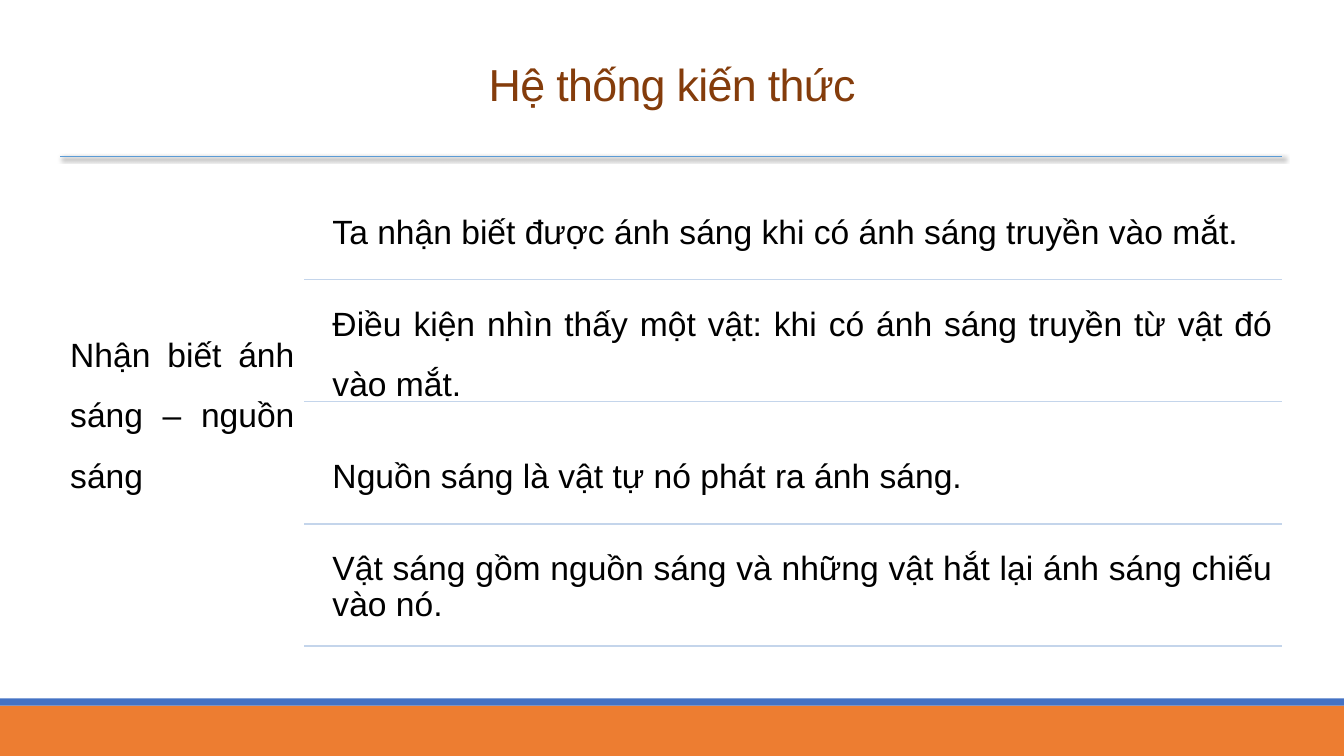
import pptx
import pptx.util
import pptx.dml.color
import pptx.enum.shapes
import pptx.enum.text
import pptx.oxml.ns
from lxml import etree

Cm = pptx.util.Cm
Pt = pptx.util.Pt
RGBColor = pptx.dml.color.RGBColor
ALIGN = pptx.enum.text.PP_ALIGN

BROWN = RGBColor(0x84, 0x3C, 0x0B)
BLACK = RGBColor(0x00, 0x00, 0x00)
ORANGE = RGBColor(0xED, 0x7D, 0x31)
BLUE = RGBColor(0x44, 0x72, 0xC4)
SKY = RGBColor(0x5B, 0x9B, 0xD5)
PALE_BLUE = RGBColor(0xC4, 0xD5, 0xEB)

SLIDE_WIDTH = 33.87
LEFT, RIGHT = 1.52, 32.31
STATEMENT_LEFT, RULE_LEFT = 8.13, 7.67
HEADER_Y, FIRST_ROW = 3.94, 4.09
ROW_HEIGHT, ROW_PITCH = 2.95, 3.08

TOPIC = "Nhận biết ánh sáng – nguồn sáng"
STATEMENTS = [
    ("Ta nhận biết được ánh sáng khi có ánh sáng truyền vào mắt.", 1.5),
    ("Điều kiện nhìn thấy một vật: khi có ánh sáng truyền từ vật đó vào mắt.", 1.5),
    ("Nguồn sáng là vật tự nó phát ra ánh sáng.", 1.5),
    ("Vật sáng gồm nguồn sáng và những vật hắt lại ánh sáng chiếu vào nó.", 0.9),
]


class SlideBuilder:
    font = "Arial"

    def __init__(self, slide):
        self.slide = slide

    def fill_text(self, box, text, size, color, align, spacing=1.5):
        """Fill a box with one formatted paragraph and return its span."""
        frame = box.text_frame
        frame.text = text
        frame.word_wrap = True
        frame.auto_size = pptx.enum.text.MSO_AUTO_SIZE.NONE
        frame.vertical_anchor = pptx.enum.text.MSO_ANCHOR.MIDDLE
        para = frame.paragraphs[0]
        para.alignment = align
        para.line_spacing = spacing
        span = para.runs[0]
        span.font.name = self.font
        span.font.size = Pt(size)
        span.font.color.rgb = color
        return span

    def title(self, text, left, top, width, height):
        box = self.slide.shapes.title
        box.left, box.top = Cm(left), Cm(top)
        box.width, box.height = Cm(width), Cm(height)
        span = self.fill_text(box, text, 32, BROWN, ALIGN.CENTER)
        span.font._element.set("spc", "-50")

    def text(self, text, left, top, width, height, spacing=1.5):
        box = self.slide.shapes.add_textbox(Cm(left), Cm(top), Cm(width), Cm(height))
        self.fill_text(box, text, 24, BLACK, ALIGN.JUSTIFY, spacing)
        frame = box.text_frame
        frame.margin_left = frame.margin_right = Cm(0.25)
        frame.margin_top = frame.margin_bottom = Cm(0.25)

    def band(self, top, height, color):
        band = self.slide.shapes.add_shape(
            pptx.enum.shapes.MSO_SHAPE.RECTANGLE,
            Cm(0), Cm(top), Cm(SLIDE_WIDTH), Cm(height))
        band.shadow.inherit = False
        band.fill.solid()
        band.fill.fore_color.rgb = color
        band.line.fill.background()

    def rule(self, left, y, color, weight, shadow=False):
        """Draw a horizontal line to the right edge of the content."""
        rule = self.slide.shapes.add_connector(
            pptx.enum.shapes.MSO_CONNECTOR.STRAIGHT,
            Cm(left), Cm(y), Cm(RIGHT), Cm(y))
        rule.line.color.rgb = color
        rule.line.width = Pt(weight)
        qn = pptx.oxml.ns.qn
        effects = etree.SubElement(rule._element.spPr, qn("a:effectLst"))
        if shadow:
            outer = etree.SubElement(
                effects, qn("a:outerShdw"), blurRad=str(Pt(3)), dist=str(Pt(2)),
                dir=str(45 * 60000), rotWithShape="0")
            tint = etree.SubElement(outer, qn("a:srgbClr"), val=str(BLACK))
            etree.SubElement(tint, qn("a:alpha"), val="60000")


def main():
    deck = pptx.Presentation()
    deck.slide_width, deck.slide_height = Cm(SLIDE_WIDTH), Cm(19.05)
    page = deck.slides.add_slide(deck.slide_layouts.get_by_name("Title Only"))
    builder = SlideBuilder(page)

    builder.band(17.78, 1.27, ORANGE)
    builder.band(17.6, 0.18, BLUE)
    builder.title("Hệ thống kiến thức", 2.97, 0.41, 27.94, 2.72)
    builder.rule(LEFT, HEADER_Y, SKY, 1, shadow=True)
    builder.text(TOPIC, LEFT, HEADER_Y, RULE_LEFT - LEFT, 12.5)

    for row, (statement, spacing) in enumerate(STATEMENTS):
        top = FIRST_ROW + row * ROW_PITCH
        builder.text(statement, STATEMENT_LEFT, top,
                     RIGHT - STATEMENT_LEFT, ROW_HEIGHT, spacing)
        builder.rule(RULE_LEFT, top + ROW_HEIGHT, PALE_BLUE, 1.25)

    deck.save("out.pptx")


if __name__ == "__main__":
    main()
